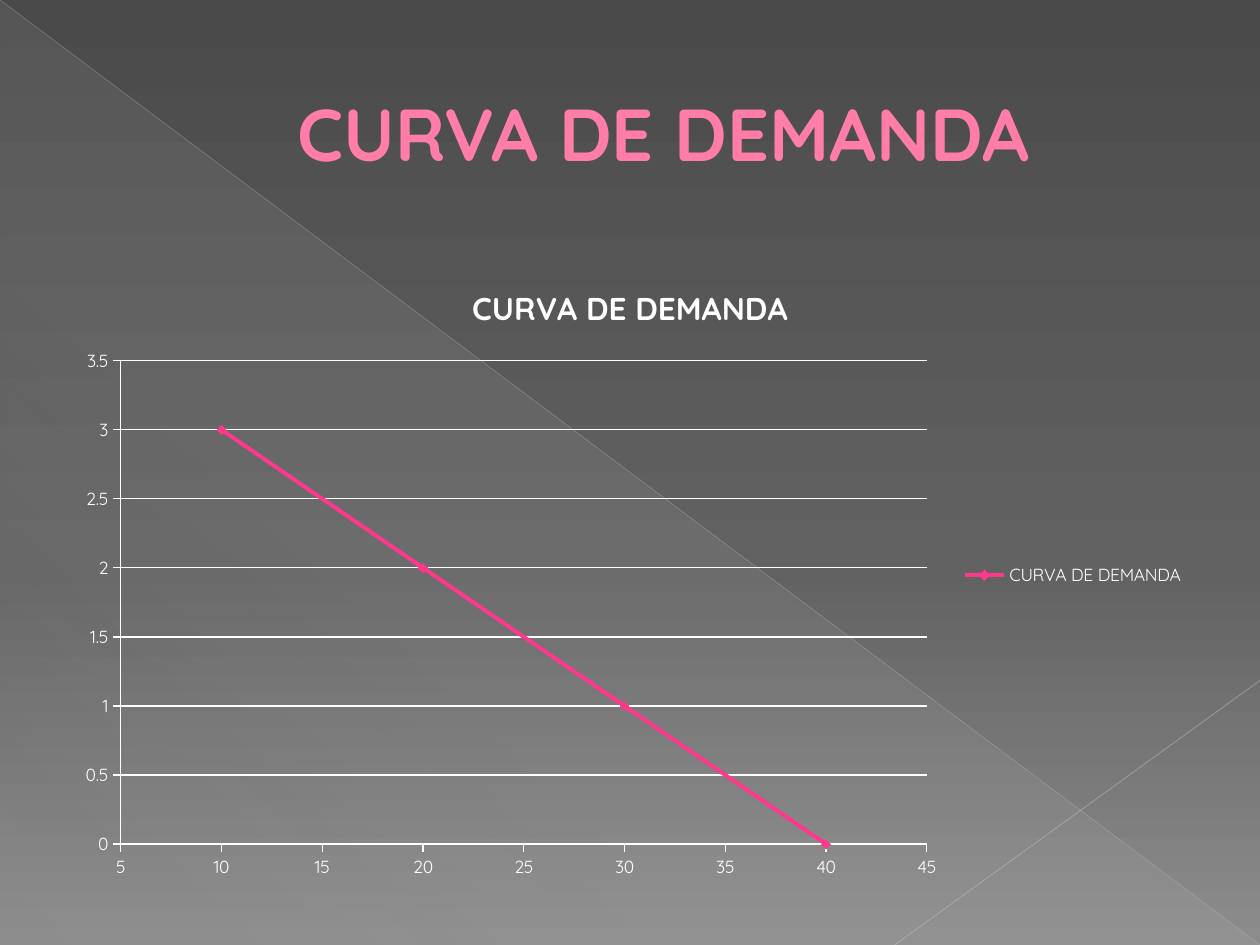
from typing import Any, NamedTuple

from lxml.etree import SubElement
from pptx import Presentation
from pptx.chart.data import XyChartData
from pptx.dml.color import RGBColor
from pptx.enum.chart import XL_CHART_TYPE, XL_LEGEND_POSITION, XL_MARKER_STYLE, XL_TICK_MARK
from pptx.enum.shapes import MSO_CONNECTOR, MSO_SHAPE
from pptx.enum.text import MSO_ANCHOR, PP_ALIGN
from pptx.oxml.ns import qn
from pptx.util import Inches, Pt

WIDE, HIGH = Inches(10), Inches(7.5)
FACE = "Quicksand"
HEAD = "CURVA DE DEMANDA"
WHITE = RGBColor(0xFF, 0xFF, 0xFF)
PINK = RGBColor(0xFF, 0x38, 0x8C)
ROSE = RGBColor(0xFF, 0x7D, 0xA7)
WINE = RGBColor(0xB1, 0x27, 0x61)
DARK = RGBColor(0x4A, 0x4A, 0x4A)
SLATE = RGBColor(0x62, 0x62, 0x62)
ASH = RGBColor(0x8C, 0x8C, 0x8C)
PALE = RGBColor(0xD2, 0xD2, 0xD2)
SILVER = RGBColor(0xBF, 0xBF, 0xBF)
MIST = RGBColor(0xC6, 0xC6, 0xC6)


class Stop(NamedTuple):
    place: int
    color: RGBColor
    alpha: int = 100


class Ray(NamedTuple):
    start: tuple[float, float]
    end: tuple[float, float]
    color: RGBColor
    width: float
    alpha: int


class Scale(NamedTuple):
    low: float
    high: float
    step: float
    grid: bool


RAYS = [
    Ray((0, 0), (1, 1), SILVER, 0.39, 35),
    Ray((1, 0.72), (0.71, 1), MIST, 0.47, 45),
]
BACK = [Stop(0, DARK), Stop(60, SLATE), Stop(100, ASH)]
SHEEN = [Stop(0, PALE, 10), Stop(70, PALE, 8), Stop(100, PALE, 1)]
POINTS = [(40, 0), (30, 1), (20, 2), (10, 3)]
ACROSS = Scale(5, 45, 5, False)
UPWARD = Scale(0, 3.5, 0.5, True)


def spot(x: float, y: float) -> tuple[int, int]:
    return int(WIDE * x), int(HIGH * y)


def add_tint(node: Any, color: RGBColor, alpha: int = 100) -> None:
    tint = SubElement(node, qn("a:srgbClr"), val=str(color))
    if alpha < 100:
        SubElement(tint, qn("a:alpha"), val=str(alpha * 1000))


def blend(fill: Any, root: Any, stops: list[Stop], angle: int) -> None:
    fill.gradient()
    grad = root.find(".//" + qn("a:gradFill"))
    for child in list(grad):
        grad.remove(child)
    group = SubElement(grad, qn("a:gsLst"))
    for stop in stops:
        node = SubElement(group, qn("a:gs"), pos=str(stop.place * 1000))
        add_tint(node, stop.color, stop.alpha)
    SubElement(grad, qn("a:lin"), ang=str(angle * 60000), scaled="0")


def draw_ray(slide: Any, ray: Ray) -> None:
    line = slide.shapes.add_connector(
        MSO_CONNECTOR.STRAIGHT, *spot(*ray.start), *spot(*ray.end))
    line.line.width = Pt(ray.width)
    line.line.color.rgb = ray.color
    props = line._element.spPr
    tint = props.find(".//" + qn("a:srgbClr"))
    SubElement(tint, qn("a:alpha"), val=str(ray.alpha * 1000))
    SubElement(props, qn("a:effectLst"))


def draw_back(slide: Any) -> None:
    blend(slide.background.fill, slide._element, BACK, 90)
    wedge = slide.shapes.add_shape(MSO_SHAPE.RIGHT_TRIANGLE, 0, 0, WIDE, HIGH)
    wedge.shadow.inherit = False
    wedge.line.fill.background()
    blend(wedge.fill, wedge._element, SHEEN, 133)
    for ray in RAYS:
        draw_ray(slide, ray)


def draw_head(slide: Any) -> None:
    box = slide.shapes.add_textbox(*spot(0.05, 0.04), *spot(0.9, 0.2))
    frame = box.text_frame
    frame.word_wrap = True
    frame.vertical_anchor = MSO_ANCHOR.MIDDLE
    para = frame.paragraphs[0]
    para.alignment = PP_ALIGN.CENTER
    run = para.add_run()
    run.text = HEAD
    font = para.font
    font.name, font.size, font.bold = FACE, Pt(42), True
    font.color.rgb = ROSE
    props = para._p.get_or_add_pPr()
    props.set("marL", str(Inches(0.53)))
    props.set("indent", "0")
    edge = SubElement(run._r.get_or_add_rPr(), qn("a:ln"), w=str(Pt(0.5)))
    add_tint(SubElement(edge, qn("a:solidFill")), WINE)


def set_axis(axis: Any, scale: Scale) -> None:
    axis.minimum_scale, axis.maximum_scale = scale.low, scale.high
    axis.major_unit = scale.step
    axis.major_tick_mark = XL_TICK_MARK.OUTSIDE
    axis.minor_tick_mark = XL_TICK_MARK.NONE
    axis.has_major_gridlines = scale.grid
    lines = [axis.format.line]
    if scale.grid:
        lines.append(axis.major_gridlines.format.line)
    for line in lines:
        line.color.rgb = WHITE
        line.width = Pt(0.75)
    axis.tick_labels.number_format = "General"
    axis.tick_labels.number_format_is_linked = False


def draw_chart(slide: Any) -> None:
    data = XyChartData()
    curve = data.add_series(HEAD)
    for x, y in POINTS:
        curve.add_data_point(x, y)
    chart = slide.shapes.add_chart(
        XL_CHART_TYPE.XY_SCATTER_SMOOTH, *spot(0.05, 0.275), *spot(0.9, 0.667), data).chart
    chart.font.name, chart.font.size = FACE, Pt(10)
    chart.font.color.rgb = WHITE
    chart.has_title = True
    title = chart.chart_title.text_frame
    title.text = HEAD
    font = title.paragraphs[0].font
    font.name, font.size, font.bold = FACE, Pt(18), True
    font.color.rgb = WHITE
    chart.has_legend = True
    chart.legend.position = XL_LEGEND_POSITION.RIGHT
    chart.legend.include_in_layout = False
    set_axis(chart.category_axis, ACROSS)
    set_axis(chart.value_axis, UPWARD)
    plot = chart.plots[0]
    plot.vary_by_categories = False
    series = plot.series[0]
    series.format.line.color.rgb = PINK
    series.format.line.width = Pt(2.25)
    mark = series.marker
    mark.style, mark.size = XL_MARKER_STYLE.DIAMOND, 5
    mark.format.fill.solid()
    mark.format.fill.fore_color.rgb = PINK
    mark.format.line.color.rgb = PINK


def main() -> None:
    deck = Presentation()
    deck.slide_width, deck.slide_height = WIDE, HIGH
    slide = deck.slides.add_slide(deck.slide_layouts[6])
    draw_back(slide)
    draw_head(slide)
    draw_chart(slide)
    deck.save("out.pptx")


if __name__ == "__main__":
    main()
